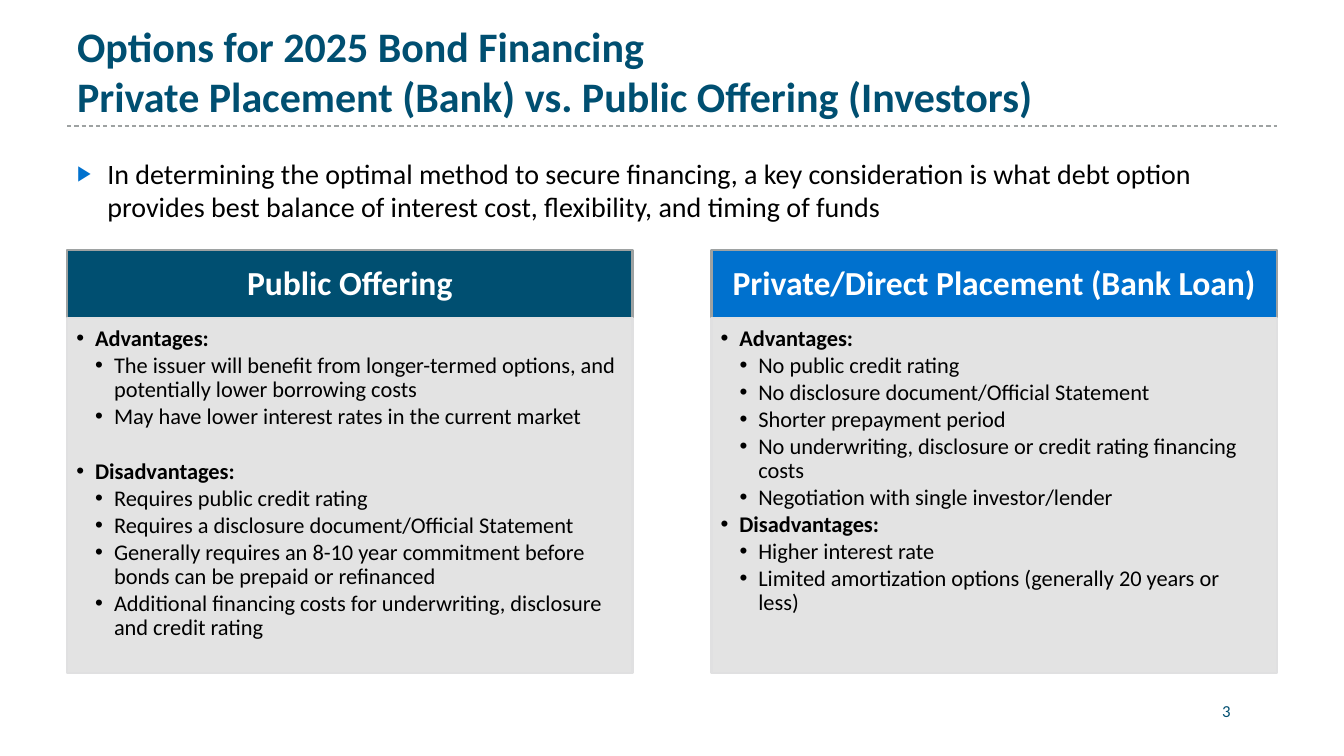
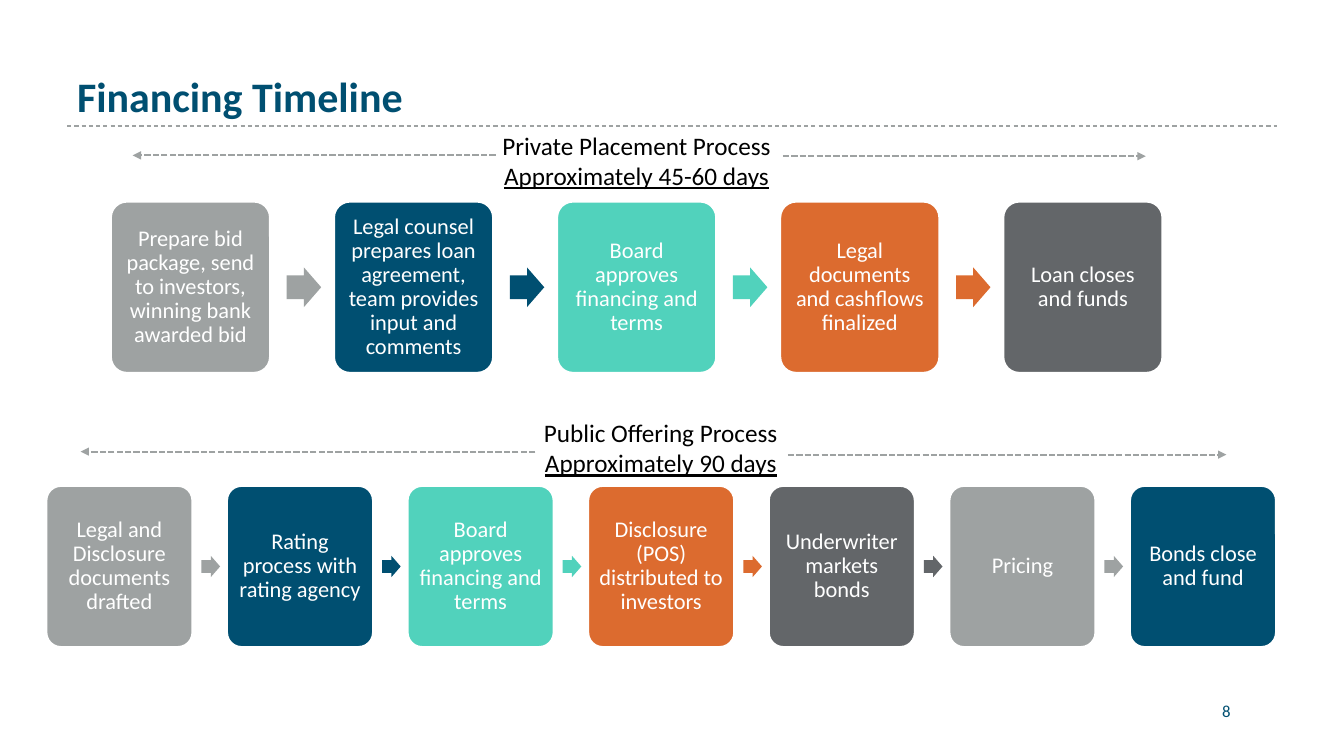
import itertools

import lxml.etree
import pptx
import pptx.dml.color
import pptx.enum.dml
import pptx.enum.shapes
import pptx.enum.text
import pptx.oxml.ns
import pptx.util

RGBColor = pptx.dml.color.RGBColor
Pt = pptx.util.Pt
SHAPE = pptx.enum.shapes.MSO_SHAPE
ANCHOR = pptx.enum.text.MSO_ANCHOR
ALIGN = pptx.enum.text.PP_ALIGN
DASH = pptx.enum.dml.MSO_LINE
qn = pptx.oxml.ns.qn

NAVY = RGBColor(0x00, 0x4F, 0x71)
BLUE = RGBColor(0x00, 0x71, 0xCE)
TEAL = RGBColor(0x51, 0xD2, 0xBC)
ORANGE = RGBColor(0xDC, 0x6B, 0x2F)
SLATE = RGBColor(0x63, 0x66, 0x69)
GREY = RGBColor(0x9E, 0xA2, 0xA2)
PANEL = RGBColor(0xE0, 0xE0, 0xE1)
WHITE = RGBColor(0xFF, 0xFF, 0xFF)
BLACK = RGBColor(0x00, 0x00, 0x00)

COLS, ROWS = 80, 45
LEFT, RIGHT = 4, 76
STEP_COLORS = (GREY, NAVY, TEAL, ORANGE, SLATE)

TITLE = dict(size=Pt(30), bold=True)
LEAD = dict(size=Pt(20))
HEADING = dict(size=Pt(24), bold=True)
STRONG = dict(size=Pt(16), bold=True)
BODY = dict(size=Pt(16))
LABEL = dict(size=Pt(18))
UNDERLINED = dict(size=Pt(18), underline=True)
NUMBER = dict(size=Pt(12))

CENTER = dict(alignment=ALIGN.CENTER)
TIGHT = dict(alignment=ALIGN.CENTER, line_spacing=0.9)
ITEM = dict(line_spacing=0.9, space_after=Pt(2))


class Deck:
    font = "Calibri"

    def __init__(self):
        self.prs = pptx.Presentation()
        self.prs.slide_width = pptx.util.Inches(13.33)
        self.prs.slide_height = pptx.util.Inches(7.5)
        self.s = None

    def x(self, cols):
        return round(self.prs.slide_width * cols / COLS)

    def y(self, rows):
        return round(self.prs.slide_height * rows / ROWS)

    def box(self, left, top, width, height):
        return self.x(left), self.y(top), self.x(width), self.y(height)

    def slide(self, title, number):
        self.s = self.prs.slides.add_slide(self.prs.slide_layouts[6])
        self.line(LEFT, 7.5, RIGHT, 7.5, 0.75, DASH.DASH)
        tf = self.text(LEFT, 1.5, RIGHT - LEFT, 6, ANCHOR.BOTTOM)
        for text in title:
            self.para(tf, text, TITLE, NAVY)
        tf = self.text(70, 41.4, 6, 2.4)
        self.para(tf, number, NUMBER, NAVY, CENTER)

    def frame(self, sp, anchor, insets=None):
        tf = sp.text_frame
        tf.word_wrap = True
        tf.vertical_anchor = anchor
        for side, cells in zip(("left", "top", "right", "bottom"), insets or ()):
            setattr(tf, "margin_" + side, self.x(cells))
        return tf

    def text(self, left, top, width, height, anchor=ANCHOR.TOP):
        sp = self.s.shapes.add_textbox(*self.box(left, top, width, height))
        return self.frame(sp, anchor)

    def shape(self, kind, at, fill, line=None, adjust=(), alpha=None):
        sp = self.s.shapes.add_shape(kind, *self.box(*at))
        sp.shadow.inherit = False
        for i, value in enumerate(adjust):
            sp.adjustments[i] = value
        sp.fill.solid()
        sp.fill.fore_color.rgb = fill
        if alpha:
            color = sp._element.spPr.find(qn("a:solidFill"))[0]
            lxml.etree.SubElement(color, qn("a:alpha"), val=str(alpha * 1000))
        if line is None:
            sp.line.fill.background()
        else:
            sp.line.color.rgb = line
            sp.line.width = Pt(1.5)
        return sp

    def line(self, x1, y1, x2, y2, width, dash, arrow=False):
        cx = self.s.shapes.add_connector(
            pptx.enum.shapes.MSO_CONNECTOR.STRAIGHT,
            self.x(x1), self.y(y1), self.x(x2), self.y(y2))
        cx.line.color.rgb = GREY
        cx.line.width = Pt(width)
        cx.line.dash_style = dash
        spPr = cx._element.spPr
        if arrow:
            lxml.etree.SubElement(spPr.find(qn("a:ln")), qn("a:tailEnd"), type="triangle")
        lxml.etree.SubElement(spPr, qn("a:effectLst"))

    def para(self, tf, text, style, color, layout=None, bullet=None):
        p = tf.paragraphs[0]
        if p.runs:
            p = tf.add_paragraph()
        if bullet:
            self.bullet(p, **bullet)
        for name, value in (layout or {}).items():
            setattr(p, name, value)
        r = p.add_run()
        r.text = text
        for name, value in dict(style, name=self.font).items():
            setattr(r.font, name, value)
        r.font.color.rgb = color

    def bullet(self, p, char, indent, hang, color=None, size=None):
        pPr = p._p.get_or_add_pPr()
        pPr.set("marL", str(self.x(indent)))
        pPr.set("indent", str(-self.x(hang)))
        if color:
            buClr = lxml.etree.SubElement(pPr, qn("a:buClr"))
            lxml.etree.SubElement(buClr, qn("a:srgbClr"), val=str(color))
        if size:
            lxml.etree.SubElement(pPr, qn("a:buSzPct"), val=str(size * 1000))
        lxml.etree.SubElement(pPr, qn("a:buFont"), typeface="Arial")
        lxml.etree.SubElement(pPr, qn("a:buChar"), char=char)

    def card(self, left, heading, color, groups, gap):
        width, top, head, body = 33.65, 14.9, 4.05, 21.1
        sp = self.shape(SHAPE.RECTANGLE, (left, top, width, head), color, GREY)
        tf = self.frame(sp, ANCHOR.MIDDLE, (1.14, 0.66, 1.14, 0.66))
        self.para(tf, heading, HEADING, WHITE, TIGHT)
        sp = self.shape(SHAPE.RECTANGLE, (left, top + head, width, body), PANEL, PANEL, alpha=90)
        tf = self.frame(sp, ANCHOR.TOP, (0.54, 0.54, 0.72, 0.84))
        for i, (name, items) in enumerate(groups.items()):
            layout = dict(ITEM, alignment=ALIGN.LEFT)
            if i:
                layout["space_before"] = Pt(gap)
            self.para(tf, name, STRONG, BLACK, layout, dict(char="•", indent=1.12, hang=1.12))
            for item in items:
                self.para(tf, item, BODY, BLACK, dict(ITEM, alignment=ALIGN.LEFT),
                          dict(char="•", indent=2.25, hang=1.12))

    def process(self, left, right, top, width, height, steps):
        pitch = (right - left - width) / (len(steps) - 1)
        gap = pitch - width
        arrow_h = 0.62 * gap
        for i, (step, color) in enumerate(zip(steps, itertools.cycle(STEP_COLORS))):
            x = left + i * pitch
            sp = self.shape(SHAPE.ROUNDED_RECTANGLE, (x, top, width, height), color, WHITE, (0.1,))
            tf = self.frame(sp, ANCHOR.MIDDLE, (0.42,) * 4)
            self.para(tf, step, BODY, WHITE, TIGHT)
            if i < len(steps) - 1:
                at = (x + width + 0.26 * gap, top + (height - arrow_h) / 2, 0.54 * gap, arrow_h)
                self.shape(SHAPE.RIGHT_ARROW, at, color, adjust=(0.6, 0.5))

    def span(self, left, top, name, duration, arrows):
        tf = self.text(left, top, 38.1, 4.26)
        self.para(tf, name, LABEL, BLACK, CENTER)
        self.para(tf, duration, UNDERLINED, BLACK, CENTER)
        for start, end, y in arrows:
            self.line(start, y, end, y, 1.5, DASH.SQUARE_DOT, arrow=True)


def main():
    deck = Deck()

    deck.slide(("Options for 2025 Bond Financing",
                "Private Placement (Bank) vs. Public Offering (Investors)"), "3")
    tf = deck.text(LEFT, 9, RIGHT - LEFT, 5)
    deck.para(tf, "In determining the optimal method to secure financing, a key consideration is "
              "what debt option provides best balance of interest cost, flexibility, and timing of funds",
              LEAD, BLACK, bullet=dict(char="▶", indent=1.8, hang=1.8, color=BLUE, size=76))
    deck.card(LEFT, "Public Offering", NAVY, {
        "Advantages:": (
            "The issuer will benefit from longer-termed options, and potentially lower borrowing costs",
            "May have lower interest rates in the current market"),
        "Disadvantages:": (
            "Requires public credit rating",
            "Requires a disclosure document/Official Statement",
            "Generally requires an 8-10 year commitment before bonds can be prepaid or refinanced",
            "Additional financing costs for underwriting, disclosure and credit rating"),
    }, gap=19.6)
    deck.card(42.35, "Private/Direct Placement (Bank Loan)", BLUE, {
        "Advantages:": (
            "No public credit rating",
            "No disclosure document/Official Statement",
            "Shorter prepayment period",
            "No underwriting, disclosure or credit rating financing costs",
            "Negotiation with single investor/lender"),
        "Disadvantages:": (
            "Higher interest rate",
            "Limited amortization options (generally 20 years or less)"),
    }, gap=0)

    deck.slide(("Financing Timeline",), "8")
    deck.process(6.6, 69.2, 12, 9.48, 10.2, (
        "Prepare bid package, send to investors, winning bank awarded bid",
        "Legal counsel prepares loan agreement, team provides input and comments",
        "Board approves financing and terms",
        "Legal documents and cashflows finalized",
        "Loan closes and funds"))
    deck.process(2.76, 75.96, 28.92, 8.7, 9.6, (
        "Legal and Disclosure documents drafted",
        "Rating process with rating agency",
        "Board approves financing and terms",
        "Disclosure (POS) distributed to investors",
        "Underwriter markets bonds",
        "Pricing",
        "Bonds close and fund"))
    deck.span(18.84, 7.44, "Private Placement Process", "Approximately 45-60 days",
              ((29.5, 7.9, 9.25), (46.6, 68.2, 9.3)))
    deck.span(20.28, 24.54, "Public Offering Process", "Approximately 90 days",
              ((31.86, 4.8, 26.88), (46.9, 73, 27.06)))

    deck.prs.save("out.pptx")


if __name__ == "__main__":
    main()
